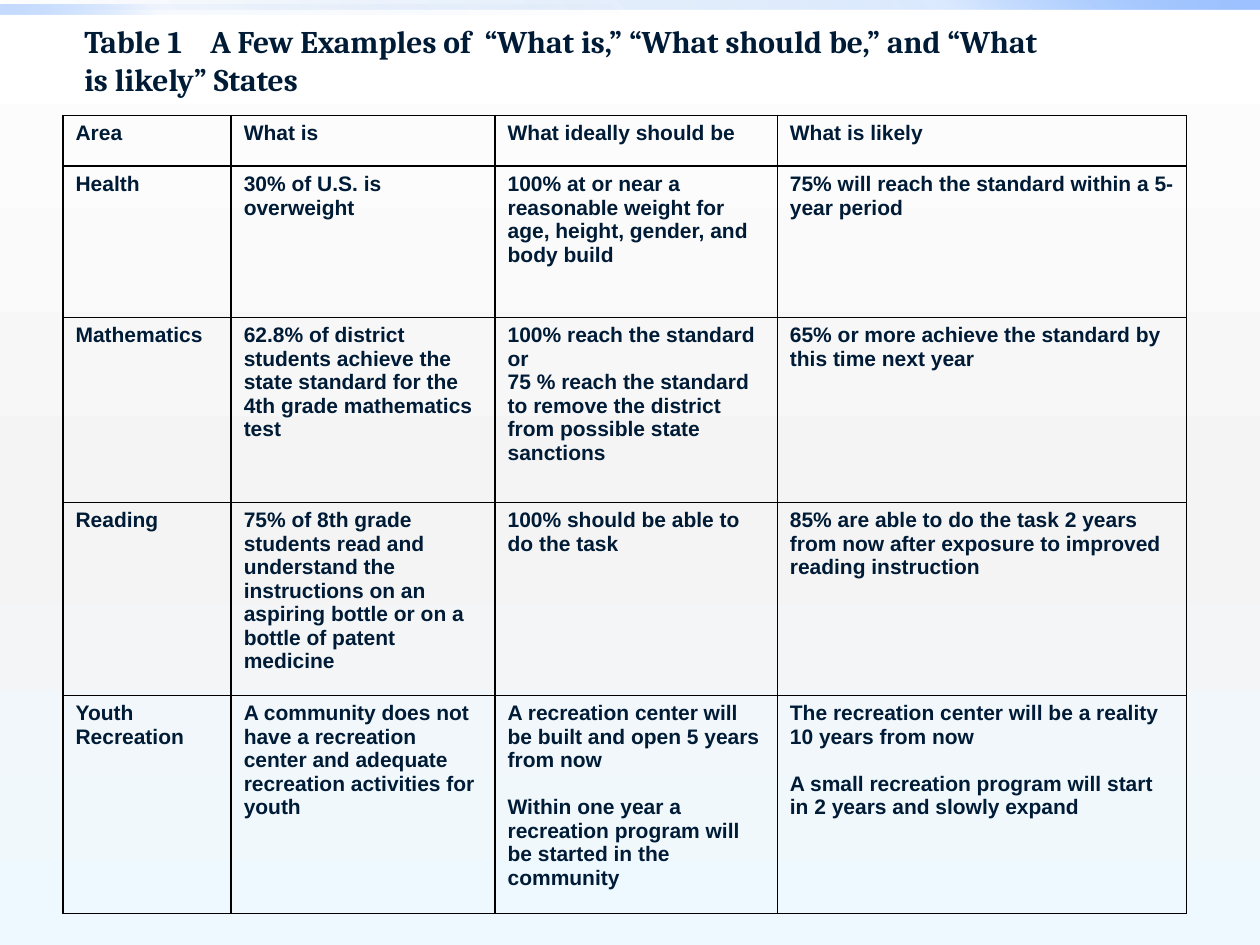
from dataclasses import dataclass

from lxml.etree import SubElement
from pptx import Presentation
from pptx.dml.color import RGBColor
from pptx.enum.shapes import MSO_SHAPE
from pptx.enum.text import MSO_ANCHOR
from pptx.oxml.ns import qn
from pptx.util import Cm, Pt

NAVY = RGBColor(0x00, 0x1B, 0x36)
BLACK = RGBColor(0x00, 0x00, 0x00)
WHITE = RGBColor(0xFF, 0xFF, 0xFF)
GREY = RGBColor(0xF4, 0xF4, 0xF4)
ICE = RGBColor(0xEE, 0xF9, 0xFF)
DEEP = RGBColor(0x00, 0x58, 0xB7)
BLUE = RGBColor(0x4F, 0x95, 0xFF)
PALE = RGBColor(0x9E, 0xC2, 0xFF)


@dataclass
class Stop:
    pos: int
    color: RGBColor
    alpha: int = 100


@dataclass
class Bar:
    top: float
    width: float
    angle: int
    stops: list[Stop]


BARS = [
    Bar(0, 25.4, 315, [Stop(0, DEEP, 0), Stop(75, BLUE, 20), Stop(100, PALE)]),
    Bar(0.1, 12.7, 135, [Stop(0, DEEP, 0), Stop(75, BLUE, 5), Stop(100, PALE, 60)]),
]
TITLE = [
    "Table 1\tA Few Examples of  “What is,” “What should be,” and “What",
    "is likely” States",
]
COLS = [3.39, 5.32, 5.69, 8.25]
ROWS = [1.02, 3.05, 3.73, 3.89, 4.39]
# A line break starts a new paragraph; a double one adds a line of space.
CELLS = [
    ["Area", "What is", "What ideally should be", "What is likely"],
    ["Health",
     "30% of U.S. is overweight",
     "100% at or near a reasonable weight for age, height, gender, and body build",
     "75% will reach the standard within a 5-year period"],
    ["Mathematics",
     "62.8% of district students achieve the state standard for the "
     "4th grade mathematics test",
     "100% reach the standard\nor\n75 % reach the standard to remove the "
     "district from possible state sanctions",
     "65% or more achieve the standard by this time next year"],
    ["Reading",
     "75% of 8th grade students read and understand the instructions on an "
     "aspiring bottle or on a bottle of patent medicine",
     "100% should be able to do the task",
     "85% are able to do the task 2 years from now after exposure to "
     "improved reading instruction"],
    ["Youth\nRecreation",
     "A community does not have a recreation center and adequate "
     "recreation activities for youth",
     "A recreation center will be built and open 5 years from now\n\n"
     "Within one year a recreation program will be started in the community",
     "The recreation center will be a reality 10 years from now\n\n"
     "A small recreation program will start in 2 years and slowly expand"],
]


def blend(props, stops: list[Stop], angle: int) -> None:
    """Swap the solid fill in props for a linear gradient."""
    solid = props.find(qn("a:solidFill"))
    grad = props.makeelement(qn("a:gradFill"), {"rotWithShape": "1"})
    group = SubElement(grad, qn("a:gsLst"))
    for stop in stops:
        mark = SubElement(group, qn("a:gs"), pos=str(stop.pos * 1000))
        color = SubElement(mark, qn("a:srgbClr"), val=str(stop.color))
        if stop.alpha < 100:
            SubElement(color, qn("a:alpha"), val=str(stop.alpha * 1000))
    SubElement(grad, qn("a:lin"), ang=str(angle * 60000), scaled="0")
    props.replace(solid, grad)


def style(para, name: str, size: int) -> None:
    font = para.font
    font.name, font.size, font.bold = name, Pt(size), True
    font.color.rgb = NAVY


def add_back(slide) -> None:
    slide.background.fill.solid()
    props = slide.element.find(".//" + qn("p:bgPr"))
    blend(props, [Stop(0, WHITE), Stop(55, GREY), Stop(100, ICE)], 90)


def add_bar(slide, bar: Bar) -> None:
    shape = slide.shapes.add_shape(
        MSO_SHAPE.RECTANGLE, 0, Cm(bar.top), Cm(bar.width), Cm(0.2))
    shape.shadow.inherit = False
    shape.line.fill.background()
    shape.fill.solid()
    blend(shape.element.spPr, bar.stops, bar.angle)


def add_title(slide) -> None:
    box = slide.shapes.add_textbox(Cm(1.7), Cm(0.44), Cm(19.76), Cm(1.54))
    frame = box.text_frame
    frame.word_wrap = True
    frame.vertical_anchor = MSO_ANCHOR.MIDDLE
    frame.margin_left = frame.margin_right = 0
    frame.margin_top = frame.margin_bottom = 0
    frame.text = "\n".join(TITLE)
    for para in frame.paragraphs:
        style(para, "Cambria", 18)


def add_edges(cell) -> None:
    props = cell._tc.get_or_add_tcPr()
    for place, side in enumerate(("a:lnL", "a:lnR", "a:lnT", "a:lnB")):
        line = props.makeelement(qn(side), {"w": str(Pt(1))})
        fill = SubElement(line, qn("a:solidFill"))
        SubElement(fill, qn("a:srgbClr"), val=str(BLACK))
        props.insert(place, line)


def fill_cell(cell, text: str) -> None:
    frame = cell.text_frame
    for block, part in enumerate(text.split("\n\n")):
        for row, line in enumerate(part.split("\n")):
            first = block == row == 0
            para = frame.paragraphs[0] if first else frame.add_paragraph()
            para.text = line
            style(para, "Arial", 12)
            if block and not row:
                para.space_before = Pt(13.4)
    cell.fill.background()
    add_edges(cell)


def add_grid(slide) -> None:
    table = slide.shapes.add_table(
        len(ROWS), len(COLS), Cm(1.27), Cm(2.33),
        Cm(sum(COLS)), Cm(sum(ROWS))).table
    table.first_row = table.horz_banding = False
    for col, width in zip(table.columns, COLS):
        col.width = Cm(width)
    for row, height, texts in zip(table.rows, ROWS, CELLS):
        row.height = Cm(height)
        for cell, text in zip(row.cells, texts):
            fill_cell(cell, text)


def main() -> None:
    deck = Presentation()
    deck.slide_width, deck.slide_height = Cm(25.4), Cm(19.05)
    slide = deck.slides.add_slide(deck.slide_layouts[6])
    add_back(slide)
    for bar in BARS:
        add_bar(slide, bar)
    add_title(slide)
    add_grid(slide)
    deck.save("out.pptx")


if __name__ == "__main__":
    main()
